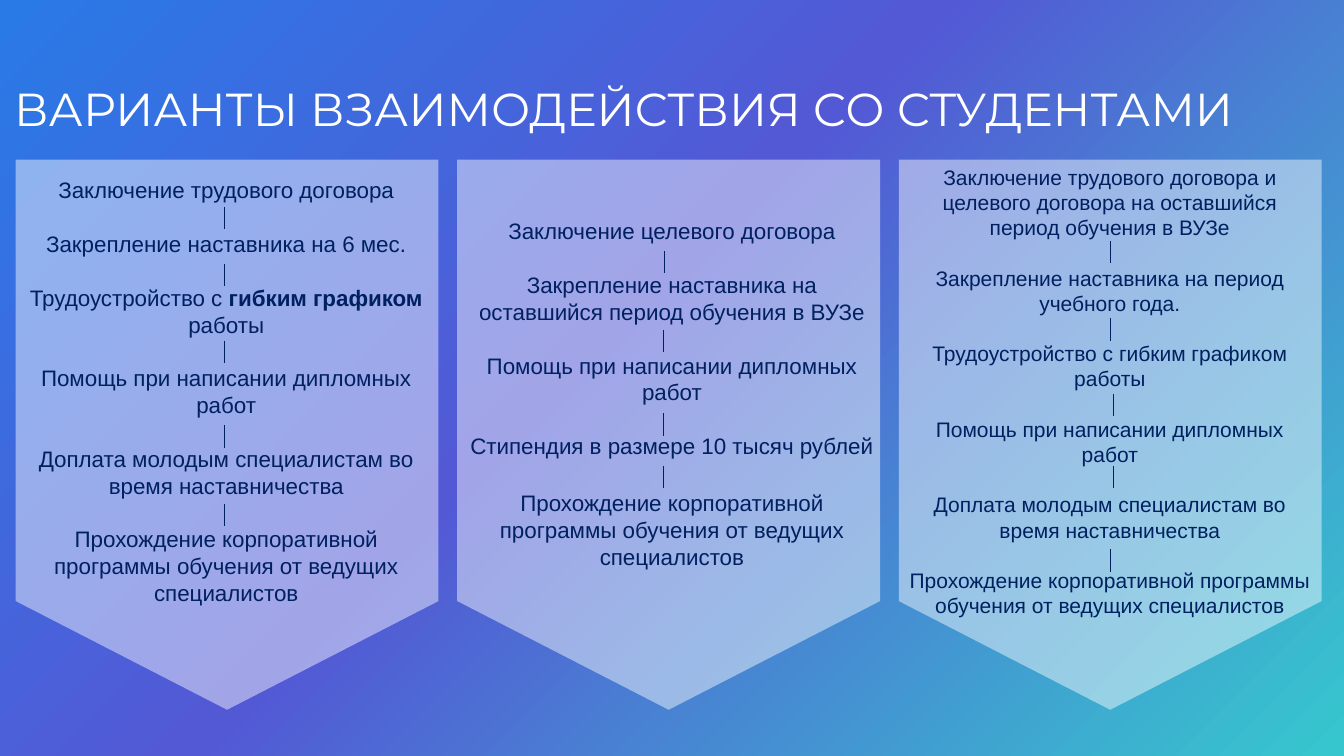
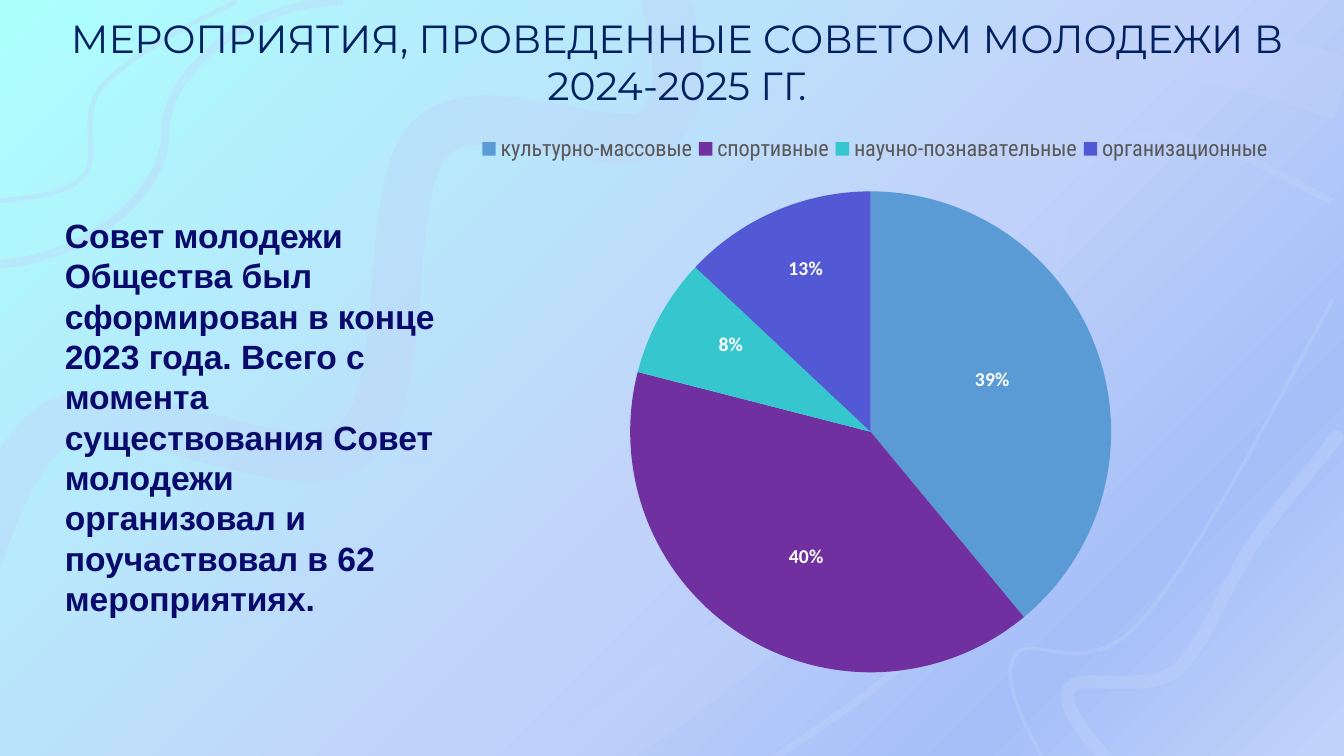
"""Build two slides: ways of working with students and a youth council review."""
import dataclasses

import lxml.etree
import pptx
import pptx.chart.data
import pptx.dml.color
import pptx.enum.chart
import pptx.enum.shapes
import pptx.enum.text
import pptx.oxml.ns
import pptx.util

Pt = pptx.util.Pt
qn = pptx.oxml.ns.qn
ALIGN = pptx.enum.text.PP_ALIGN


@dataclasses.dataclass(frozen=True)
class Theme:
    """Colours, fonts and type sizes of the presentation."""
    white: str = "FFFFFF"
    navy: str = "002060"
    ink: str = "0A0A6C"
    grey: str = "595959"
    strand: str = "C2D3FA"
    slices: tuple = ("5B9BD5", "7030A0", "36C7CE", "5359D5")
    vivid: tuple = ((0, "297AE7"), (45, "5359D5"), (100, "36C7CE"))
    pale: tuple = ((0, "C2D3FA"), (18, "A6BFF8"), (44, "C2D3FA"), (100, "ABFFFD"))
    title_font: str = "Montserrat"
    body_font: str = "Arial"
    label_font: str = "Calibri"
    legend_font: str = "Roboto Condensed"
    title_size: float = 33
    long_title_size: float = 28
    statement_size: float = 24
    legend_size: float = 16
    label_size: float = 14
    line_height: float = 1.2
    panel_opacity: int = 46
    strand_opacity: int = 36


THEME = Theme()
PANEL_LEFT, PANEL_TOP, PANEL_WIDTH, PANEL_HEIGHT, PANEL_PITCH = 11.2, 114, 302, 393, 315.4
TICK_LENGTH = 16

COLUMNS = (
    {"text_box": (0.4, 8.4, 300, 317.5), "size": 16, "last_gap": 19.2,
     "steps": ("Заключение трудового договора",
               "Закрепление наставника на 6 мес.",
               "Трудоустройство с *гибким графиком *работы",
               "Помощь при написании дипломных работ",
               "Доплата молодым специалистам во время наставничества",
               "Прохождение корпоративной программы обучения от ведущих специалистов"),
     "ticks": ((148.8, 33.6), (148.8, 74.6), (148.8, 129.4), (148.8, 189.8), (148.8, 246))},
    {"text_box": (-1.8, 37.7, 310.3, 259), "size": 16, "last_gap": 21.6,
     "steps": ("Заключение целевого договора",
               "Закрепление наставника на оставшийся период обучения в ВУЗе",
               "Помощь при написании дипломных работ",
               "Стипендия в размере 10 тысяч рублей",
               "Прохождение корпоративной программы обучения от ведущих специалистов"),
     "ticks": ((148, 65.3), (147.2, 121.4), (147.2, 181.2), (147.2, 218.6))},
    {"text_box": (-0.1, -0.2, 301.7, 334), "size": 15, "last_gap": 18,
     "steps": ("Заключение трудового договора и целевого договора на оставшийся "
               "период обучения в ВУЗе",
               "Закрепление наставника на период учебного года.",
               "Трудоустройство с гибким графиком работы",
               "Помощь при написании дипломных работ",
               "Доплата молодым специалистам во время наставничества",
               "Прохождение корпоративной программы обучения от ведущих специалистов"),
     "ticks": ((150.8, 58.1), (150.8, 113.5), (153.2, 167.5), (153.2, 218.6), (150.8, 278.4))},
)

STRANDS = (
    (45, (960, 64), (
        (878, 37, 796, 10, 742, 59), (688, 108, 693, 273, 633, 358),
        (572, 442, 377, 566, 377, 566))),
    (35, (469, -27), (
        (482, 23, 495, 73, 467, 94), (440, 115, 343, 63, 307, 99),
        (271, 137, 296, 284, 253, 317), (209, 351, 92, 279, 44, 301),
        (-4, 324, -24, 442, -38, 454), (-52, 464, -46, 417, -40, 369))),
    (5, (951, 144), (
        (886, 109, 821, 73, 781, 116), (741, 159, 753, 327, 711, 402),
        (667, 477, 555, 536, 523, 563), (492, 590, 508, 576, 523, 563))),
    (9.5, (799, 552), (
        (778, 528, 757, 505, 764, 492), (770, 480, 818, 496, 840, 479),
        (862, 461, 877, 413, 896, 387), (915, 360, 942, 330, 950, 318),
        (959, 307, 954, 314, 949, 320))),
    (2.5, (745, 542), (
        (729, 512, 714, 482, 726, 467), (737, 452, 775, 487, 814, 445),
        (851, 403, 901, 309, 952, 214))),
    (3.5, (169, 1), (
        (130, 20, 91, 41, 73, 62), (55, 83, 73, 113, 59, 127),
        (45, 140, 18, 142, -9, 144))),
)

EVENTS = (
    ("культурно-массовые", 39, (0.01, -0.02)),
    ("спортивные", 40, (0, 0.04)),
    ("научно-познавательные", 8, (-0.04, -0.05)),
    ("организационные", 13, (-0.02, -0.09)),
)


def rgb(value):
    """Return a colour object for a hex value."""
    return pptx.dml.color.RGBColor.from_string(value)


def apply_format(target, values):
    """Set each named attribute of the target."""
    for name, value in values.items():
        setattr(target, name, value)


def style_font(font, color, **values):
    """Set the colour and the other values of a font."""
    apply_format(font, values)
    font.color.rgb = rgb(color)


def add_child(parent, tag, **attributes):
    """Append an XML child with the given attributes."""
    child = lxml.etree.SubElement(parent, qn(tag))
    for name, value in attributes.items():
        child.set(name, str(value))
    return child


def set_opacity(shape, percent):
    """Make the coloured part of a shape see-through."""
    for color in shape.element.spPr.iter(qn("a:srgbClr")):
        add_child(color, "a:alpha", val=percent * 1000)


def style_line(shape, color, width):
    """Give a line its colour and width and no shadow."""
    shape.line.color.rgb = rgb(color)
    shape.line.width = Pt(width)
    if shape.element.spPr.find(qn("a:effectLst")) is None:
        add_child(shape.element.spPr, "a:effectLst")


def set_background(slide, stops, focus):
    """Fill the background with a gradient that starts in one corner."""
    slide.background.fill.gradient()
    gradient = next(slide.element.iter(qn("a:gradFill")))
    for child in list(gradient):
        gradient.remove(child)
    stop_list = add_child(gradient, "a:gsLst")
    for position, color in stops:
        stop = add_child(stop_list, "a:gs", pos=position * 1000)
        add_child(stop, "a:srgbClr", val=color)
    circle = add_child(gradient, "a:path", path="circle")
    add_child(circle, "a:fillToRect", **{side: 100000 for side in focus})


def add_text(slide, box, steps, color, gaps=None, alignment=ALIGN.LEFT, line_height=None, **font):
    """Place paragraphs in a box; asterisks enclose bold runs."""
    frame = slide.shapes.add_textbox(*map(Pt, box)).text_frame
    frame.word_wrap = True
    for index, step in enumerate(steps):
        paragraph = frame.paragraphs[0] if index == 0 else frame.add_paragraph()
        paragraph.alignment = alignment
        if line_height:
            paragraph.line_spacing = Pt(line_height)
        if index:
            paragraph.space_before = Pt(gaps[index - 1])
        for position, part in enumerate(step.split("*")):
            run = paragraph.add_run()
            run.text = part
            style_font(run.font, color, **{"bold": position % 2 == 1, **font})


def add_title(slide, box, text, color, size, alignment):
    """Place a slide title."""
    add_text(slide, box, (text,), color, alignment=alignment,
             size=Pt(size), name=THEME.title_font)


def add_panel(slide, left, top, width, height):
    """Place a translucent pentagon that points down."""
    turn = (height - width) / 2
    panel = slide.shapes.add_shape(
        pptx.enum.shapes.MSO_SHAPE.PENTAGON,
        Pt(left - turn), Pt(top + turn), Pt(height), Pt(width))
    panel.rotation = 90
    panel.adjustments[0] = 0.257
    panel.shadow.inherit = False
    panel.fill.solid()
    panel.fill.fore_color.rgb = rgb(THEME.white)
    panel.line.fill.background()
    set_opacity(panel, THEME.panel_opacity)


def add_column(slide, left, top, column):
    """Place the panel, steps and ticks of one column."""
    add_panel(slide, left, top, PANEL_WIDTH, PANEL_HEIGHT)
    text_left, text_top, width, height = column["text_box"]
    line_height = column["size"] * THEME.line_height
    gaps = [line_height] * (len(column["steps"]) - 2) + [column["last_gap"]]
    add_text(slide, (left + text_left, top + text_top, width, height), column["steps"],
             THEME.navy, gaps, ALIGN.CENTER, line_height,
             size=Pt(column["size"]), name=THEME.body_font)
    for tick_left, tick_top in column["ticks"]:
        x, y = left + tick_left, top + tick_top
        tick = slide.shapes.add_connector(
            pptx.enum.shapes.MSO_CONNECTOR.STRAIGHT, Pt(x), Pt(y), Pt(x), Pt(y + TICK_LENGTH))
        style_line(tick, THEME.navy, 0.5)


def add_curve(slide, start, segments):
    """Place an open outline of cubic curves and return it."""
    builder = slide.shapes.build_freeform(*map(Pt, start))
    points = [tuple(map(Pt, segment[at:at + 2])) for segment in segments for at in (0, 2, 4)]
    builder.add_line_segments(points, close=False)
    curve = builder.convert_to_shape()
    lines = list(curve.element.iter(qn("a:lnTo")))
    outline = lines[0].getparent()
    for first in range(0, len(lines), 3):
        cubic = add_child(outline, "a:cubicBezTo")
        for line in lines[first:first + 3]:
            cubic.append(line[0])
            outline.remove(line)
    curve.fill.background()
    return curve


def add_strands(slide):
    """Place the pale curved strands behind the content."""
    strands = [(add_curve(slide, start, segments), width) for width, start, segments in STRANDS]
    bend = slide.shapes.add_connector(
        pptx.enum.shapes.MSO_CONNECTOR.CURVE, Pt(245), Pt(1), Pt(-9), Pt(189))
    for strand, width in strands + [(bend, 6)]:
        style_line(strand, THEME.strand, width)
        set_opacity(strand, THEME.strand_opacity)


def add_layout(parent, index, values):
    """Insert a manual chart layout at an index of the parent."""
    for old in parent.findall(qn("c:layout")):
        parent.remove(old)
    layout = lxml.etree.Element(qn("c:layout"))
    manual = add_child(layout, "c:manualLayout")
    for name, value in values.items():
        add_child(manual, "c:" + name, val=value)
    parent.insert(index, layout)


def add_pie(slide, box):
    """Place the pie chart of events with its legend on top."""
    data = pptx.chart.data.CategoryChartData()
    data.categories = [name for name, _, _ in EVENTS]
    data.add_series("Series 1", [value for _, value, _ in EVENTS])
    chart = slide.shapes.add_chart(
        pptx.enum.chart.XL_CHART_TYPE.PIE, *map(Pt, box), data).chart
    apply_format(chart, {"has_title": False, "has_legend": True})
    style_font(chart.font, "000000", size=Pt(10), name=THEME.label_font)
    apply_format(chart.legend, {"position": pptx.enum.chart.XL_LEGEND_POSITION.TOP,
                                "include_in_layout": False})
    style_font(chart.legend.font, THEME.grey, size=Pt(THEME.legend_size), name=THEME.legend_font)
    plot = chart.plots[0]
    plot.vary_by_categories = True
    for index, (color, event) in enumerate(zip(THEME.slices, EVENTS)):
        point = plot.series[0].points[index]
        point.format.fill.solid()
        point.format.fill.fore_color.rgb = rgb(color)
        label = point.data_label
        style_font(label.font, THEME.white, size=Pt(THEME.label_size), bold=True,
                   name=THEME.label_font)
        label.position = pptx.enum.chart.XL_LABEL_POSITION.CENTER
        element = list(chart.element.iter(qn("c:dLbl")))[index]
        element.find(qn("c:showVal")).set("val", "0")
        element.find(qn("c:showPercent")).set("val", "1")
        add_layout(element, 1, dict(zip("xy", event[2])))
    edges = {"xMode": "edge", "yMode": "edge"}
    add_layout(next(chart.element.iter(qn("c:plotArea"))), 0,
               {"layoutTarget": "inner", **edges, "x": 0.21, "y": 0.13, "w": 0.56, "h": 0.83})
    add_layout(next(chart.element.iter(qn("c:legend"))), 1,
               {**edges, "x": 0.03, "y": 0.03, "w": 0.93, "h": 0.06})


def build_options_slide(slide):
    """Fill the slide with three ways of working with students."""
    set_background(slide, THEME.vivid, "rb")
    for index, column in enumerate(COLUMNS):
        add_column(slide, PANEL_LEFT + index * PANEL_PITCH, PANEL_TOP, column)
    add_title(slide, (3, 54, 949, 47.5), "ВАРИАНТЫ ВЗАИМОДЕЙСТВИЯ СО СТУДЕНТАМИ",
              THEME.white, THEME.title_size, ALIGN.LEFT)


def build_events_slide(slide):
    """Fill the slide with the council statement and its chart."""
    set_background(slide, THEME.pale, "lt")
    add_strands(slide)
    add_pie(slide, (321.3, 81.3, 613.5, 417))
    add_title(slide, (34.5, 6.8, 898, 75),
              "МЕРОПРИЯТИЯ, ПРОВЕДЕННЫЕ СОВЕТОМ МОЛОДЕЖИ В 2024-2025 ГГ.",
              THEME.navy, THEME.long_title_size, ALIGN.CENTER)
    add_text(slide, (39.2, 150, 282, 298),
             ("Совет молодежи Общества был сформирован в конце 2023 года. Всего с момента "
              "существования Совет молодежи организовал и поучаствовал в 62 мероприятиях.",),
             THEME.ink, line_height=THEME.statement_size * THEME.line_height,
             size=Pt(THEME.statement_size), name=THEME.body_font, bold=True)


def main():
    """Build and save the presentation."""
    presentation = pptx.Presentation()
    apply_format(presentation, {"slide_width": Pt(960), "slide_height": Pt(540)})
    for build in (build_options_slide, build_events_slide):
        build(presentation.slides.add_slide(presentation.slide_layouts[6]))
    presentation.save("out.pptx")


if __name__ == "__main__":
    main()
